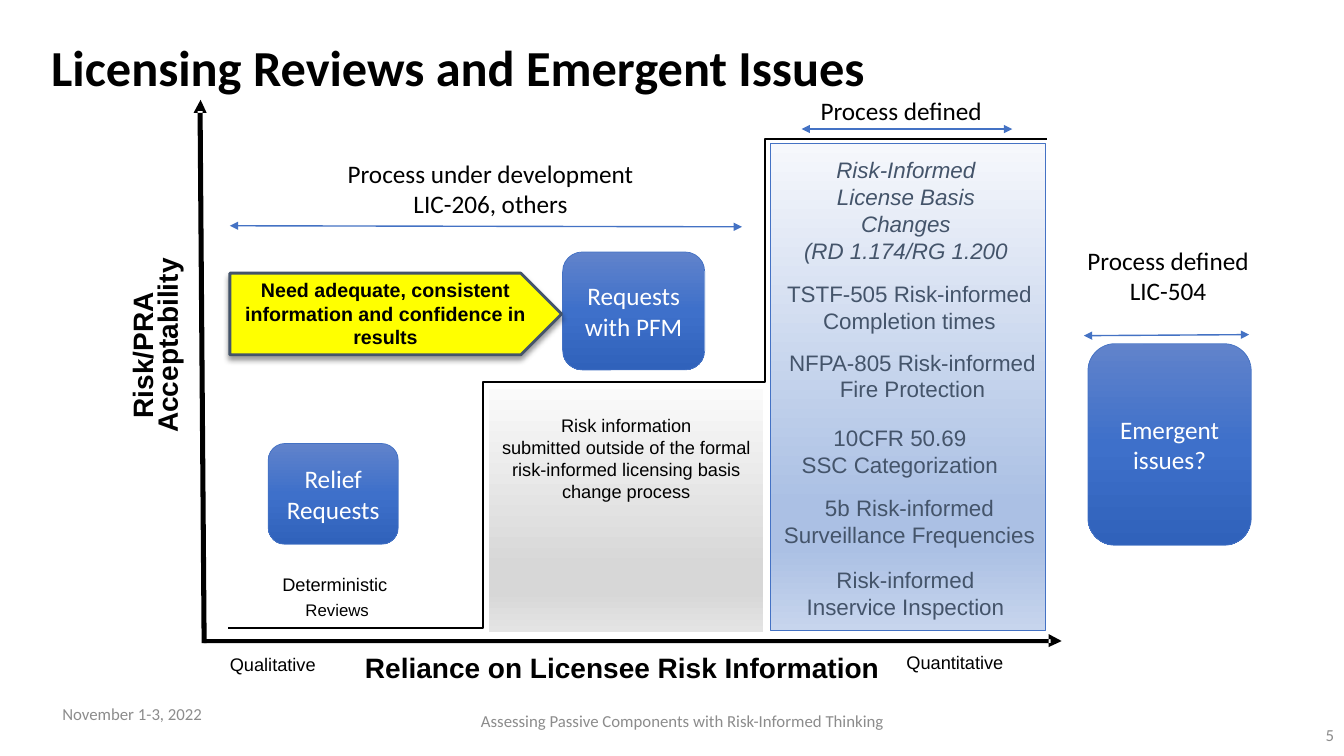
from pptx import Presentation
from pptx.dml.color import RGBColor
from pptx.enum.shapes import MSO_CONNECTOR, MSO_SHAPE
from pptx.enum.text import MSO_ANCHOR, MSO_AUTO_SIZE, PP_ALIGN
from pptx.oxml import parse_xml
from pptx.oxml.ns import nsdecls
from pptx.util import Inches, Pt

LEFT, CENTER, RIGHT = PP_ALIGN.LEFT, PP_ALIGN.CENTER, PP_ALIGN.RIGHT
TOP, MIDDLE = MSO_ANCHOR.TOP, MSO_ANCHOR.MIDDLE
GROW, FIXED = MSO_AUTO_SIZE.SHAPE_TO_FIT_TEXT, MSO_AUTO_SIZE.NONE
RECTANGLE, ROUNDED, PENTAGON = MSO_SHAPE.RECTANGLE, MSO_SHAPE.ROUNDED_RECTANGLE, MSO_SHAPE.PENTAGON
STRAIGHT = MSO_CONNECTOR.STRAIGHT

COLORS = {"black": "000000", "white": "FFFFFF", "blue": "4472C4", "slate": "44546A",
          "yellow": "FFFF00", "gray": "8C8C8C"}
GRADIENTS = {
    "pale blue": [(0, "F6F8FC"), (74, "ABC0E4"), (83, "ABC0E4"), (100, "C7D5ED")],
    "pale gray": [(0, "FAFAFA"), (74, "D7D7D7"), (83, "D7D7D7"), (100, "E4E4E4")],
    "deep blue": [(0, "6183CB"), (50, "3E70CA"), (100, "3062BB")],
}

TITLE = ("Licensing Reviews and Emergent Issues", (0.41, 0.18, 10.74, 1.03))
PANELS = [((7.64, 1.42, 2.73, 4.83), "pale blue", "blue"),
          ((4.85, 3.86, 2.72, 2.41), "pale gray", None)]
AXES = [
    [[(2, 6.38), (1.96, 1.1), (2.01, 1.1), (2.05, 6.38)], [(1.92, 1.12), (1.99, 0.99), (2.05, 1.12)]],
    [[(2.02, 6.34), (10.42, 6.34), (10.42, 6.38), (2.02, 6.38)], [(10.4, 6.29), (10.53, 6.36), (10.4, 6.42)]],
]
STEPS = [[(7.33, 3.79), (4.79, 3.79), (4.79, 6.23), (2.26, 6.23)],
         [(10.38, 1.38), (7.59, 1.38), (7.59, 3.79), (6.06, 3.79)]]
VERTICAL_LABELS = [("Risk/PRA", (0.74, 3.31, 1.34, 0.34)),
                   ("Acceptability", (0.78, 3.25, 1.75, 0.34))]
AXIS_LABELS = [
    ("Reliance on Licensee Risk Information", (3.62, 6.45, 5.17, 0.34), 20, True),
    ("Qualitative", (2.28, 6.48, 1.08, 0.27), 13, False),
    ("Quantitative", (8.99, 6.46, 1.22, 0.27), 13, False),
]
REVIEW_LABELS = [("Deterministic", (2.8, 5.69, 1.32, 0.27), 13),
                 ("Reviews", (3.03, 5.95, 0.85, 0.25), 12)]
RISK_NOTE = (["Risk information",
              "submitted outside of the formal risk-informed licensing basis change process"],
             (4.97, 4.11, 2.48, 1.65))
REQUESTS = [("Relief Requests", (2.66, 4.4, 1.29, 1)),
            ("Requests with PFM", (5.58, 2.5, 1.41, 1.17)),
            ("Emergent issues?", (10.79, 3.41, 1.62, 2))]
SPANS = [((2.28, 2.24), (7.36, 2.25)), ((7.95, 1.28), (10.04, 1.28)), ((10.75, 3.33), (12.39, 3.32))]
PROCESSES = [
    (["Process under development", "LIC-206, others"], (3.22, 1.52, 3.29, 0.71), CENTER),
    (["Process defined"], (8.04, 0.9, 1.95, 0.4), LEFT),
    (["Process defined", "LIC-504"], (10.61, 2.38, 1.95, 0.71), CENTER),
]
PROGRAMS = [
    (["Risk-Informed", "License Basis", "Changes", "(RD 1.174/RG 1.200"], (7.86, 1.5, 2.25, 1.18), True),
    (["TSTF-505 Risk-informed", "Completion times"], (7.69, 2.73, 2.66, 0.64), False),
    (["NFPA-805 Risk-informed", "Fire Protection"], (7.68, 3.41, 2.74, 0.64), False),
    (["10CFR 50.69", "SSC Categorization"], (7.84, 4.16, 2.17, 0.64), False),
    (["5b Risk-informed", "Surveillance Frequencies"], (7.66, 4.85, 2.72, 0.64), False),
    (["Risk-informed", "Inservice Inspection"], (7.89, 5.57, 2.18, 0.64), False),
]
NEED = ("Need adequate, consistent information and confidence in results", (2.28, 2.71, 3.29, 0.81))
FOOTERS = [
    ("Assessing Passive Components with Risk-Informed Thinking", (4.42, 6.95, 4.7, 0.4), CENTER),
    ("November 1-3, 2022", (0.52, 6.88, 3, 0.4), LEFT),
    ("5", (10.9, 7.14, 2.43, 0.29), RIGHT),
]

deck = Presentation()
deck.slide_width, deck.slide_height = Inches(13.33), Inches(7.5)
page = deck.slides.add_slide(deck.slide_layouts[6])


def rgb(name):
    return RGBColor.from_string(COLORS[name])


def write(box, lines, size=18, font="Calibri", color="black", bold=False, italic=False,
          align=LEFT, anchor=TOP, wrap=True, grow=False, inset=True, spacing=None):
    frame = box.text_frame
    frame.word_wrap = wrap
    frame.auto_size = GROW if grow else FIXED
    frame.vertical_anchor = anchor
    if not inset:
        frame.margin_left = frame.margin_right = frame.margin_top = frame.margin_bottom = 0
    for index, line in enumerate(lines):
        para = frame.paragraphs[0] if index == 0 else frame.add_paragraph()
        para.alignment = align
        if spacing:
            para.line_spacing = spacing
        span = para.add_run()
        span.text = line
        span.font.size, span.font.name = Pt(size), font
        span.font.bold, span.font.italic = bold, italic
        span.font.color.rgb = rgb(color)


def add_text(lines, place, **style):
    box = page.shapes.add_textbox(*map(Inches, place))
    write(box, lines, **style)
    return box


def set_line(shape, color, width):
    if color:
        shape.line.color.rgb = rgb(color)
        shape.line.width = Pt(width)
    else:
        shape.line.fill.background()


def add_block(kind, place, fill, line=None, width=0.5):
    block = page.shapes.add_shape(kind, *map(Inches, place))
    block.shadow.inherit = False
    if fill in GRADIENTS:
        block.fill.gradient()
        block.fill.gradient_angle = 270
        stops = block.fill._fill._gradFill.gsLst
        for stop in list(stops):
            stops.remove(stop)
        for position, color in GRADIENTS[fill]:
            stops.append(parse_xml(f'<a:gs {nsdecls("a")} pos="{position * 1000}">'
                                   f'<a:srgbClr val="{color}"/></a:gs>'))
    else:
        block.fill.solid()
        block.fill.fore_color.rgb = rgb(fill)
    set_line(block, line, width)
    return block


def add_outline(contours, closed):
    start = [Inches(value) for value in contours[0][0]]
    builder = page.shapes.build_freeform(*start)
    for index, contour in enumerate(contours):
        points = [(Inches(x), Inches(y)) for x, y in contour]
        if index:
            builder.move_to(*points[0])
        builder.add_line_segments(points[1:], close=closed)
    outline = builder.convert_to_shape()
    outline.shadow.inherit = False
    if closed:
        outline.fill.solid()
        outline.fill.fore_color.rgb = rgb("black")
        set_line(outline, None, 0)
    else:
        outline.fill.background()
        set_line(outline, "black", 1.75)


def add_span(start, end):
    arrow = page.shapes.add_connector(STRAIGHT, *map(Inches, start + end))
    set_line(arrow, "blue", 1)
    for name in ("headEnd", "tailEnd"):
        arrow.line._ln.append(parse_xml(f'<a:{name} {nsdecls("a")} type="triangle"/>'))
    arrow._element.spPr.append(parse_xml(f'<a:effectLst {nsdecls("a")}/>'))


for place, fill, line in PANELS:
    add_block(RECTANGLE, place, fill, line)
add_text([TITLE[0]], TITLE[1], size=36, bold=True, anchor=MIDDLE, spacing=0.9)
for contours in AXES:
    add_outline(contours, True)
for text, place in VERTICAL_LABELS:
    label = add_text([text], place, size=20, font="Arial", bold=True, wrap=False, grow=True, inset=False)
    label.rotation = 270
add_text(*RISK_NOTE, size=13, font="Arial", align=CENTER, grow=True, inset=False)
for text, place, size, bold in AXIS_LABELS:
    label = add_block(RECTANGLE, place, "white")
    write(label, [text], size=size, font="Arial", bold=bold, wrap=False, grow=True, inset=False)
for text, place, size in REVIEW_LABELS:
    add_text([text], place, size=size, font="Arial", wrap=False, grow=True, inset=False)
for step in STEPS:
    add_outline([step], False)
for text, place in REQUESTS:
    request = add_block(ROUNDED, place, "deep blue", "blue")
    write(request, [text], color="white", align=CENTER, anchor=MIDDLE)
for start, end in SPANS:
    add_span(start, end)
for lines, place, align in PROCESSES:
    add_text(lines, place, align=align, wrap=False, grow=True)
for lines, place, italic in PROGRAMS:
    add_text(lines, place, size=16, font="Arial", color="slate", italic=italic,
             align=CENTER, wrap=False, grow=True)
need = add_block(PENTAGON, NEED[1], "yellow", "slate", 2)
write(need, [NEED[0]], size=14, font="Arial", bold=True, align=CENTER, grow=True)
need._element.spPr.find("{*}effectLst").append(parse_xml(
    f'<a:outerShdw {nsdecls("a")} blurRad="{Pt(4)}" dist="{Pt(3)}" dir="5400000" rotWithShape="0">'
    '<a:srgbClr val="000000"><a:alpha val="40000"/></a:srgbClr></a:outerShdw>'))
for text, place, align in FOOTERS:
    add_text([text], place, size=12, color="gray", align=align, anchor=MIDDLE)

deck.save("out.pptx")
